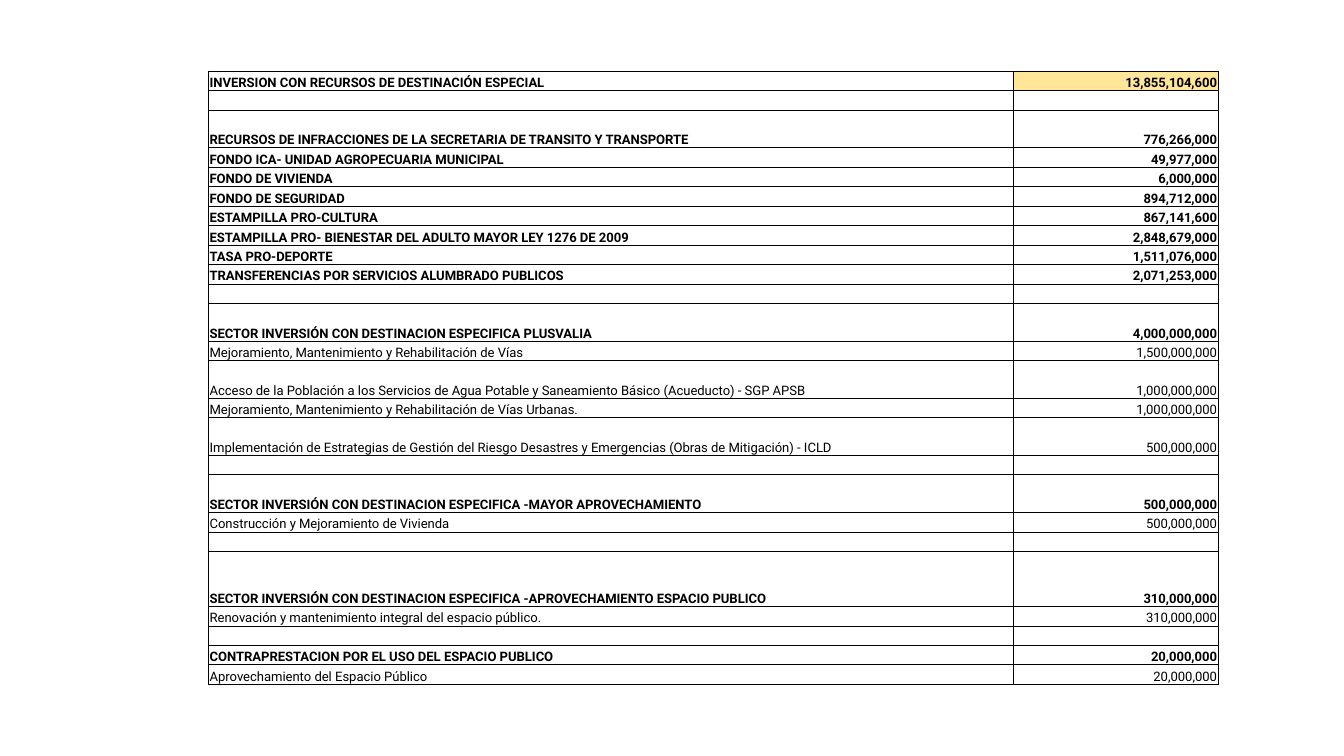
from lxml.etree import SubElement
from pptx import Presentation
from pptx.dml.color import RGBColor
from pptx.enum.text import MSO_ANCHOR, PP_ALIGN
from pptx.oxml.ns import qn
from pptx.util import Emu, Pt

PX = 4572  # 200 px to the inch
SINGLE, DOUBLE, TRIPLE = 29, 56, 82
BLACK, GOLD = "000000", "FFE699"
EMPTY = ("", "", False, SINGLE)

# concept, amount, bold, row height
BUDGET = [
    ("INVERSION CON RECURSOS DE DESTINACIÓN ESPECIAL", "13,855,104,600", True, SINGLE),
    EMPTY,
    ("RECURSOS DE INFRACCIONES DE LA SECRETARIA DE TRANSITO Y TRANSPORTE", "776,266,000", True, DOUBLE),
    ("FONDO ICA- UNIDAD AGROPECUARIA MUNICIPAL", "49,977,000", True, SINGLE),
    ("FONDO DE VIVIENDA", "6,000,000", True, SINGLE),
    ("FONDO DE SEGURIDAD", "894,712,000", True, SINGLE),
    ("ESTAMPILLA PRO-CULTURA", "867,141,600", True, SINGLE),
    ("ESTAMPILLA PRO- BIENESTAR DEL ADULTO MAYOR LEY 1276 DE 2009", "2,848,679,000", True, SINGLE),
    ("TASA PRO-DEPORTE", "1,511,076,000", True, SINGLE),
    ("TRANSFERENCIAS POR SERVICIOS ALUMBRADO PUBLICOS", "2,071,253,000", True, SINGLE),
    EMPTY,
    ("SECTOR INVERSIÓN CON DESTINACION ESPECIFICA PLUSVALIA", "4,000,000,000", True, DOUBLE),
    ("Mejoramiento, Mantenimiento y Rehabilitación de Vías", "1,500,000,000", False, SINGLE),
    ("Acceso de la Población a los Servicios de Agua Potable y Saneamiento Básico (Acueducto) - SGP APSB",
     "1,000,000,000", False, DOUBLE),
    ("Mejoramiento, Mantenimiento y Rehabilitación de Vías Urbanas.", "1,000,000,000", False, SINGLE),
    ("Implementación de Estrategias de Gestión del Riesgo Desastres y Emergencias (Obras de Mitigación) - ICLD",
     "500,000,000", False, DOUBLE),
    EMPTY,
    ("SECTOR INVERSIÓN CON DESTINACION ESPECIFICA -MAYOR APROVECHAMIENTO", "500,000,000", True, DOUBLE),
    ("Construcción y Mejoramiento de Vivienda", "500,000,000", False, SINGLE),
    EMPTY,
    ("SECTOR INVERSIÓN CON DESTINACION ESPECIFICA -APROVECHAMIENTO ESPACIO PUBLICO",
     "310,000,000", True, TRIPLE),
    ("Renovación y mantenimiento integral del espacio público.", "310,000,000", False, SINGLE),
    EMPTY,
    ("CONTRAPRESTACION POR EL USO DEL ESPACIO PUBLICO", "20,000,000", True, SINGLE),
    ("Aprovechamiento del Espacio Público", "20,000,000", False, SINGLE),
]
CELL_FORMAT = {
    "vertical_anchor": MSO_ANCHOR.BOTTOM,
    "margin_left": Emu(2 * PX),
    "margin_top": Emu(2 * PX),
    "margin_right": Emu(2 * PX),
    "margin_bottom": Emu(0),
}


def px(length):
    return Emu(length * PX)


def color(hex_value):
    return RGBColor.from_string(hex_value)


def add_borders(cell):
    properties = cell._tc.get_or_add_tcPr()
    for side in ("a:lnL", "a:lnR", "a:lnT", "a:lnB"):
        line = SubElement(properties, qn(side), w=str(Pt(0.5)))
        SubElement(SubElement(line, qn("a:solidFill")), qn("a:srgbClr"), val=BLACK)


def format_cell(cell, text, bold, align, fill):
    add_borders(cell)
    for name, value in CELL_FORMAT.items():
        setattr(cell, name, value)
    if fill:
        cell.fill.solid()
        cell.fill.fore_color.rgb = color(fill)
    else:
        cell.fill.background()
    paragraph = cell.text_frame.paragraphs[0]
    paragraph.alignment = align
    if not text:
        # Keeps the empty line as low as the written ones
        SubElement(paragraph._p, qn("a:endParaRPr"), sz="700")
        return
    run = paragraph.add_run()
    run.text = text
    for name, value in {"name": "Roboto", "size": Pt(7), "bold": bold}.items():
        setattr(run.font, name, value)
    run.font.color.rgb = color(BLACK)


def add_budget_table(slide, left, top, column_widths):
    heights = [row[-1] for row in BUDGET]
    table = slide.shapes.add_table(
        len(BUDGET), len(column_widths),
        px(left), px(top), px(sum(column_widths)), px(sum(heights))).table
    table.first_row = table.horz_banding = False
    for column, width in zip(table.columns, column_widths):
        column.width = px(width)
    for index, (concept, amount, bold, height) in enumerate(BUDGET):
        table.rows[index].height = px(height)
        total_fill = GOLD if index == 0 else None
        format_cell(table.cell(index, 0), concept, bold, PP_ALIGN.LEFT, None)
        format_cell(table.cell(index, 1), amount, bold, PP_ALIGN.RIGHT, total_fill)


def main():
    deck = Presentation()
    deck.slide_width, deck.slide_height = px(2000), px(1125)
    slide = deck.slides.add_slide(deck.slide_layouts[6])
    add_budget_table(slide, 310, 106, (1198, 305))
    deck.save("out.pptx")


if __name__ == "__main__":
    main()
